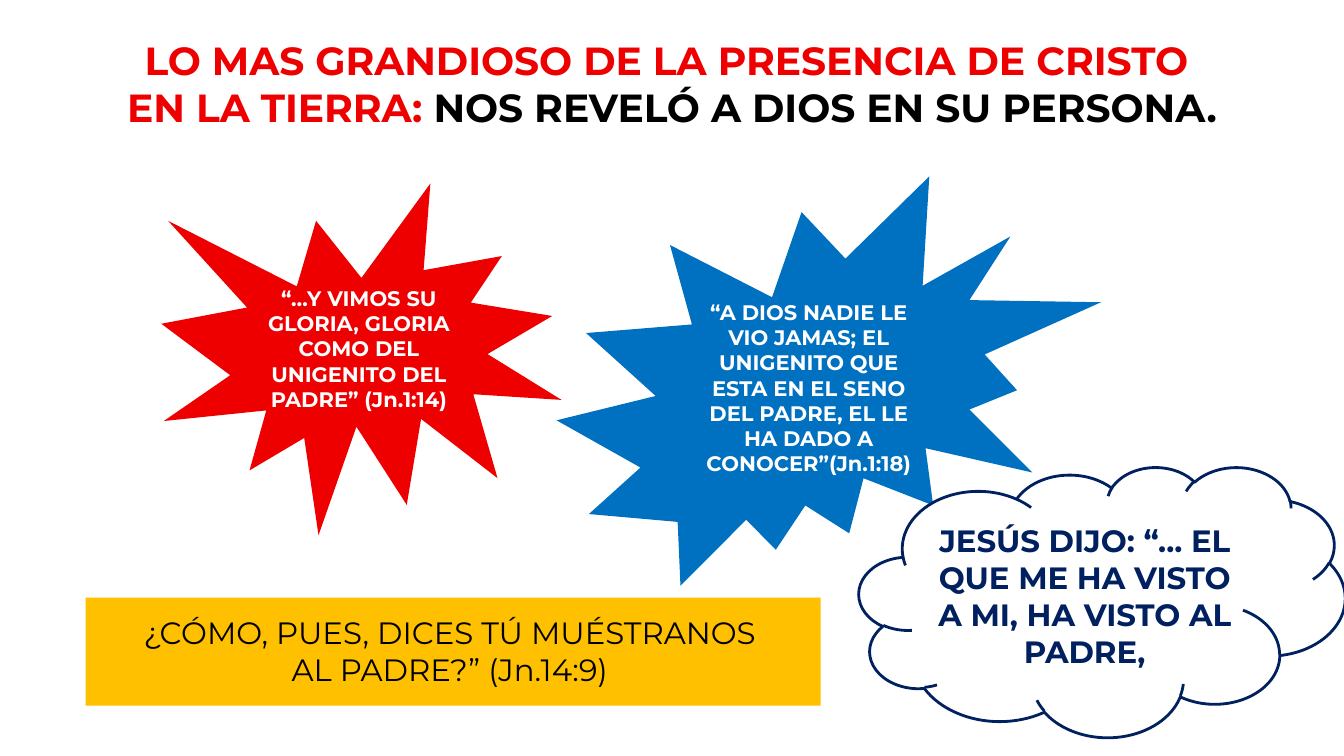
"""Build a slide on how Christ revealed God in his person."""
from pptx import Presentation
from pptx.dml.color import RGBColor
from pptx.enum.shapes import MSO_SHAPE
from pptx.enum.text import MSO_ANCHOR, PP_ALIGN
from pptx.util import Inches, Pt

RED = RGBColor(0xEE, 0x00, 0x00)
BLUE = RGBColor(0x00, 0x70, 0xC0)
NAVY = RGBColor(0x00, 0x20, 0x60)
GOLD = RGBColor(0xFF, 0xC0, 0x00)
WHITE = RGBColor(0xFF, 0xFF, 0xFF)
BLACK = RGBColor(0x00, 0x00, 0x00)

RECTANGLE = MSO_SHAPE.RECTANGLE
CLOUD = MSO_SHAPE.CLOUD
SMALL_BURST = MSO_SHAPE.EXPLOSION1
LARGE_BURST = MSO_SHAPE.EXPLOSION2
CENTER = PP_ALIGN.CENTER
MIDDLE = MSO_ANCHOR.MIDDLE
TOP = MSO_ANCHOR.TOP

VERSE = {"name": "Montserrat", "size": Pt(15), "bold": True}
SAYING = {"name": "Montserrat", "size": Pt(22), "bold": True}
QUESTION = {"name": "Montserrat", "size": Pt(22), "bold": False}
HEADING = {"name": "Montserrat", "size": Pt(28), "bold": True}


def add_panel(slide, kind, box, fill, line=None):
    """Add a filled preset shape, outlined when a line colour is given."""
    panel = slide.shapes.add_shape(kind, *map(Inches, box))
    panel.shadow.inherit = False
    panel.fill.solid()
    panel.fill.fore_color.rgb = fill
    if line is None:
        panel.line.fill.background()
    else:
        panel.line.color.rgb = line
        panel.line.width = Pt(2)
    return panel


def write_lines(holder, lines, style, anchor=MIDDLE):
    """Write centred lines, each a list of (text, colour) pieces."""
    frame = holder.text_frame
    frame.word_wrap = True
    frame.vertical_anchor = anchor
    for index, pieces in enumerate(lines):
        paragraph = frame.add_paragraph() if index else frame.paragraphs[0]
        paragraph.alignment = CENTER
        for text, color in pieces:
            run = paragraph.add_run()
            run.text = text
            run.font.color.rgb = color
            for attribute, value in style.items():
                setattr(run.font, attribute, value)


def main():
    """Build and save the slide."""
    deck = Presentation()
    deck.slide_width = Inches(13.33)
    deck.slide_height = Inches(7.5)
    slide = deck.slides.add_slide(deck.slide_layouts[6])

    no_one_has_seen = add_panel(slide, LARGE_BURST, (5.52, 1.75, 5.4, 4.06), BLUE)
    write_lines(no_one_has_seen, [[(
        "“A DIOS NADIE LE VIO JAMAS; EL UNIGENITO QUE ESTA EN EL SENO "
        "DEL PADRE, EL LE HA DADO A CONOCER”(Jn.1:18)", WHITE)]], VERSE)

    we_saw_glory = add_panel(slide, SMALL_BURST, (1.6, 1.82, 3.97, 3.49), RED)
    write_lines(we_saw_glory, [[(
        "“…Y VIMOS SU GLORIA, GLORIA COMO DEL UNIGENITO DEL PADRE” (Jn.1:14)",
        WHITE)]], VERSE)

    jesus_said = add_panel(slide, CLOUD, (8.52, 4.63, 4.82, 2.68), WHITE, NAVY)
    write_lines(jesus_said, [[(
        "JESÚS DIJO: “... EL QUE ME HA VISTO A MI, HA VISTO AL PADRE,",
        NAVY)]], SAYING)

    heading = add_panel(slide, RECTANGLE, (0, -0.05, 13.33, 1.75), WHITE, WHITE)
    write_lines(heading, [
        [("LO MAS GRANDIOSO DE LA PRESENCIA DE CRISTO ", RED)],
        [("EN LA TIERRA: ", RED), ("NOS REVELÓ A DIOS EN SU PERSONA.", BLACK)],
    ], HEADING)

    add_panel(slide, RECTANGLE, (0.85, 5.93, 7.29, 1.07), GOLD)
    question = slide.shapes.add_textbox(*map(Inches, (1.16, 6.04, 6.68, 0.84)))
    write_lines(question, [
        [("¿CÓMO, PUES, DICES TÚ MUÉSTRANOS ", BLACK)],
        [("AL PADRE?” (Jn.14:9) ", BLACK)],
    ], QUESTION, TOP)

    deck.save("out.pptx")


if __name__ == "__main__":
    main()
